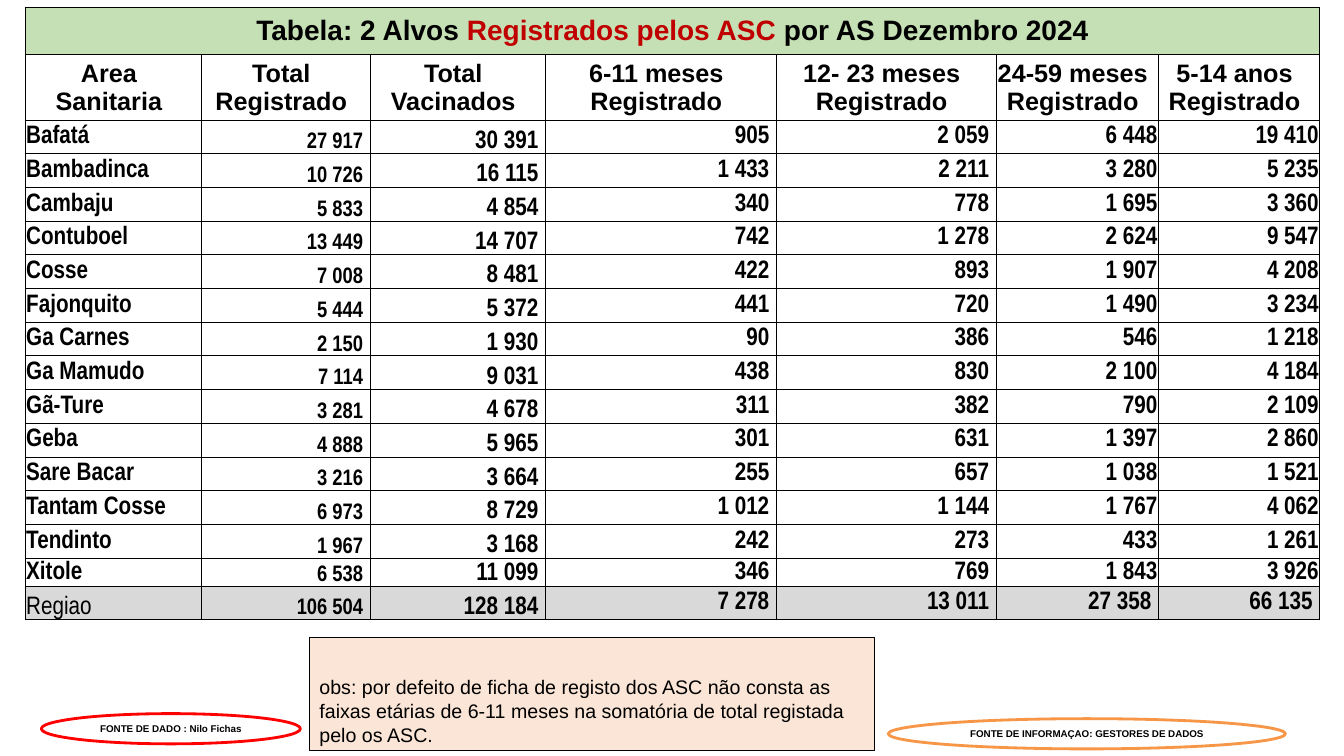
from lxml.etree import SubElement
from pptx import Presentation
from pptx.dml.color import RGBColor
from pptx.enum.shapes import MSO_SHAPE
from pptx.enum.text import MSO_ANCHOR, PP_ALIGN
from pptx.oxml.ns import qn
from pptx.util import Inches, Pt

BLACK = RGBColor(0x00, 0x00, 0x00)
WHITE = RGBColor(0xFF, 0xFF, 0xFF)
GREEN = RGBColor(0xC5, 0xE0, 0xB4)
GREY = RGBColor(0xD9, 0xD9, 0xD9)
DARK_RED = RGBColor(0xC0, 0x00, 0x00)
RED = RGBColor(0xFF, 0x00, 0x00)
ORANGE = RGBColor(0xF7, 0x96, 0x46)
PEACH = RGBColor(0xFB, 0xE5, 0xD6)

TITLE = [("Tabela: 2 Alvos ", BLACK), ("Registrados pelos ASC ", DARK_RED),
         ("por AS Dezembro 2024", BLACK)]
HEADERS = ["Area Sanitaria", "Total Registrado", "Total Vacinados", "6-11 meses Registrado",
           "12- 23 meses Registrado", "24-59 meses Registrado", "5-14 anos Registrado"]
AREAS = [
    ("Bafatá", "27 917", "30 391", "905", "2 059", "6 448", "19 410"),
    ("Bambadinca", "10 726", "16 115", "1 433", "2 211", "3 280", "5 235"),
    ("Cambaju", "5 833", "4 854", "340", "778", "1 695", "3 360"),
    ("Contuboel", "13 449", "14 707", "742", "1 278", "2 624", "9 547"),
    ("Cosse", "7 008", "8 481", "422", "893", "1 907", "4 208"),
    ("Fajonquito", "5 444", "5 372", "441", "720", "1 490", "3 234"),
    ("Ga Carnes", "2 150", "1 930", "90", "386", "546", "1 218"),
    ("Ga Mamudo", "7 114", "9 031", "438", "830", "2 100", "4 184"),
    ("Gã-Ture", "3 281", "4 678", "311", "382", "790", "2 109"),
    ("Geba", "4 888", "5 965", "301", "631", "1 397", "2 860"),
    ("Sare Bacar", "3 216", "3 664", "255", "657", "1 038", "1 521"),
    ("Tantam Cosse", "6 973", "8 729", "1 012", "1 144", "1 767", "4 062"),
    ("Tendinto", "1 967", "3 168", "242", "273", "433", "1 261"),
    ("Xitole", "6 538", "11 099", "346", "769", "1 843", "3 926"),
    ("Regiao", "106 504", "128 184", "7 278", "13 011", "27 358", "66 135"),
]
COLUMN_WIDTHS = [1.75, 1.67, 1.74, 2.29, 2.18, 1.61, 1.6]
ROW_HEIGHTS = [0.47, 0.65] + [4.35 / 13] * 13 + [0.28, 0.33]


def add_span(para, text, size, name="Arial", bold=True, color=BLACK):
    span = para.add_run()
    span.text = text
    for key, value in {"size": Pt(size), "name": name, "bold": bold}.items():
        setattr(span.font, key, value)
    span.font.color.rgb = color


def format_cell(cell, fill, align, anchor, right=0.01):
    """Set fill, alignment, margins and thin black borders of a table cell."""
    cell.fill.solid()
    cell.fill.fore_color.rgb = fill
    layout = {"margin_left": Inches(0.01), "margin_right": Inches(right),
              "margin_top": Inches(0.01), "margin_bottom": 0, "vertical_anchor": anchor}
    for key, value in layout.items():
        setattr(cell, key, value)
    cell.text_frame.paragraphs[0].alignment = align
    properties = cell._tc.get_or_add_tcPr()
    for place, side in enumerate(("a:lnL", "a:lnR", "a:lnT", "a:lnB")):
        border = SubElement(properties, qn(side), w=str(Pt(0.5)))
        SubElement(SubElement(border, qn("a:solidFill")), qn("a:srgbClr"), val=str(BLACK))
        properties.insert(place, border)


deck = Presentation()
deck.slide_width, deck.slide_height = Inches(13.33), Inches(7.5)
page = deck.slides.add_slide(deck.slide_layouts[6])

# Table of targets by health area
table = page.shapes.add_table(len(ROW_HEIGHTS), len(COLUMN_WIDTHS), Inches(0.25), Inches(0.07),
                              Inches(sum(COLUMN_WIDTHS)), Inches(sum(ROW_HEIGHTS))).table
for column, width in zip(table.columns, COLUMN_WIDTHS):
    column.width = Inches(width)
for row, height in zip(table.rows, ROW_HEIGHTS):
    row.height = Inches(height)

for cell in table.rows[0].cells:
    format_cell(cell, GREEN, PP_ALIGN.CENTER, MSO_ANCHOR.MIDDLE)
title = table.cell(0, 0)
title.merge(table.cell(0, len(HEADERS) - 1))
for text, color in TITLE:
    add_span(title.text_frame.paragraphs[0], text, 20, color=color)

for cell, text in zip(table.rows[1].cells, HEADERS):
    format_cell(cell, WHITE, PP_ALIGN.CENTER, MSO_ANCHOR.MIDDLE, 0.1)
    add_span(cell.text_frame.paragraphs[0], text, 18)

for row_index, values in enumerate(AREAS, start=2):
    total = values[0] == "Regiao"
    for col, text in enumerate(values):
        cell = table.cell(row_index, col)
        bottom = col in (1, 2) or (total and col == 0)
        padded = 1 <= col <= 4 or (total and col > 4)
        format_cell(cell, GREY if total else WHITE,
                    PP_ALIGN.RIGHT if col else PP_ALIGN.LEFT,
                    MSO_ANCHOR.BOTTOM if bottom else MSO_ANCHOR.MIDDLE,
                    0.07 if padded else 0.01)
        add_span(cell.text_frame.paragraphs[0], text, 16 if col == 1 else 18,
                 "Arial Narrow", bold=not (total and col == 0))

# Sources and remark below the table
NOTES = [
    (MSO_SHAPE.OVAL, (0.41, 7.08, 2.57, 0.3), None, RED, 2, 7,
     "FONTE DE DADO : Nilo Fichas"),
    (MSO_SHAPE.OVAL, (8.81, 7.13, 3.94, 0.3), WHITE, ORANGE, 2, 7,
     "FONTE DE INFORMAÇAO: GESTORES DE DADOS"),
    (MSO_SHAPE.RECTANGLE, (3.07, 6.32, 5.6, 1.13), PEACH, BLACK, 0.75, 14,
     "obs: por defeito de ficha de registo dos ASC não consta as faixas etárias de 6-11 meses "
     "na somatória de total registada pelo os ASC."),
]
for kind, place, fill, line, line_width, size, text in NOTES:
    box = page.shapes.add_shape(kind, *map(Inches, place))
    box.shadow.inherit = False
    if fill is None:
        box.fill.background()
    else:
        box.fill.solid()
        box.fill.fore_color.rgb = fill
    box.line.color.rgb = line
    box.line.width = Pt(line_width)
    oval = kind == MSO_SHAPE.OVAL
    frame = box.text_frame
    frame.word_wrap = True
    frame.vertical_anchor = MSO_ANCHOR.MIDDLE if oval else MSO_ANCHOR.BOTTOM
    para = frame.paragraphs[0]
    para.alignment = PP_ALIGN.CENTER if oval else PP_ALIGN.LEFT
    add_span(para, text, size, bold=oval)

deck.save("out.pptx")
